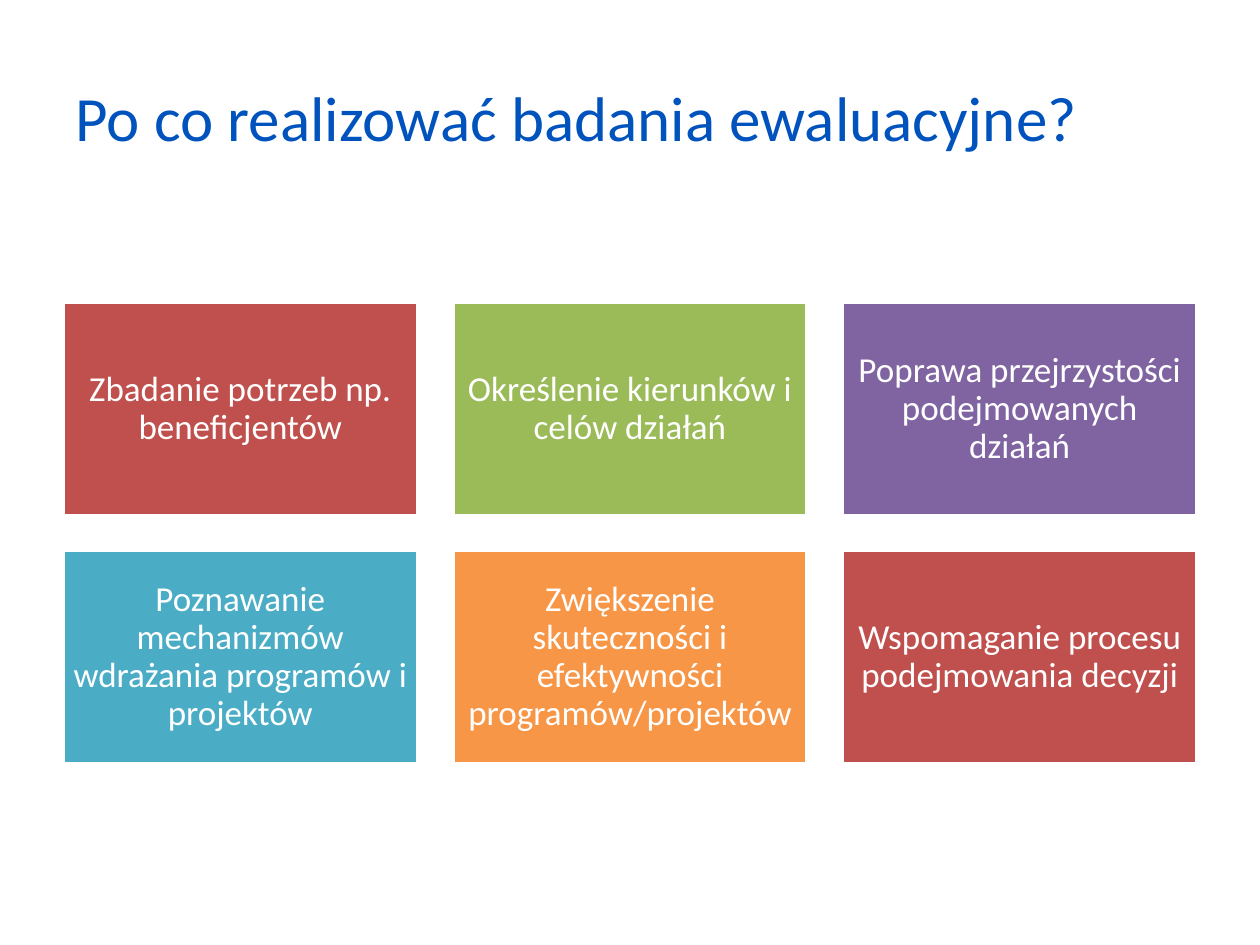
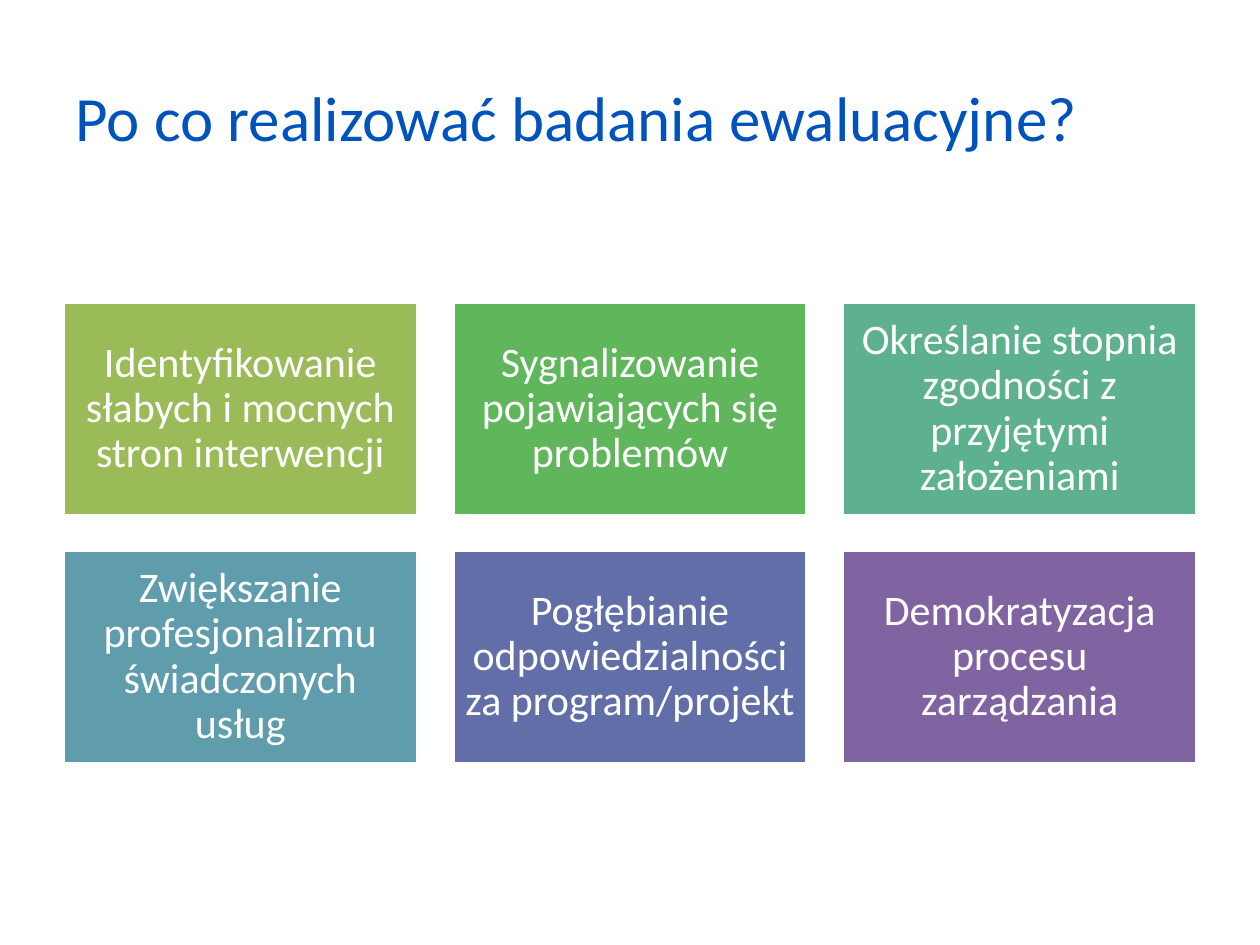
import lxml.etree
import pptx
import pptx.dml.color
import pptx.enum.shapes
import pptx.enum.text
import pptx.oxml.ns
import pptx.util

Cm = pptx.util.Cm
Pt = pptx.util.Pt

COLORS = {
    "title": "0053BD",
    "title_outline": "0570BD",
    "white": "FFFFFF",
    "red": "C0504D",
    "lime": "9BBB59",
    "green": "5FB65B",
    "mint": "5DB18E",
    "teal": "5F9DAC",
    "aqua": "4BACC6",
    "indigo": "626EA7",
    "purple": "8064A2",
    "orange": "F79646",
}
FONT = "Calibri"
TITLE = "Po co realizować badania ewaluacyjne?"

# Grid of tiles, in centimetres
MARGIN = 1.27
CONTENT_WIDTH = 22.86
GRID_TOP = 6.1
COLUMNS = 3
GAP = 0.71
TILE_WIDTH = (CONTENT_WIDTH - (COLUMNS - 1) * GAP) / COLUMNS
TILE_HEIGHT = 4.29

# Each slide: text size in points, inset in centimetres, tiles in reading order
SLIDES = [
    (20, 0.2, [
        ("Zbadanie potrzeb np. beneficjentów", "red"),
        ("Określenie kierunków i celów działań", "lime"),
        ("Poprawa przejrzystości podejmowanych działań", "purple"),
        ("Poznawanie mechanizmów wdrażania programów i projektów", "aqua"),
        ("Zwiększenie skuteczności i efektywności programów/projektów", "orange"),
        ("Wspomaganie procesu podejmowania decyzji", "red"),
    ]),
    (24, 0.25, [
        ("Identyfikowanie słabych i mocnych stron interwencji", "lime"),
        ("Sygnalizowanie pojawiających się problemów", "green"),
        ("Określanie stopnia zgodności z przyjętymi założeniami", "mint"),
        ("Zwiększanie profesjonalizmu świadczonych usług", "teal"),
        ("Pogłębianie odpowiedzialności za program/projekt", "indigo"),
        ("Demokratyzacja procesu zarządzania", "purple"),
    ]),
]


def rgb(name):
    return pptx.dml.color.RGBColor.from_string(COLORS[name])


def format_font(font, size, color):
    font.name = FONT
    font.size = Pt(size)
    font.color.rgb = rgb(color)


def outline_text(run, color, width):
    """Draw a thin line around the letters of a run."""
    qn = pptx.oxml.ns.qn
    line = lxml.etree.Element(qn("a:ln"), w=str(Pt(width)))
    fill = lxml.etree.SubElement(line, qn("a:solidFill"))
    lxml.etree.SubElement(fill, qn("a:srgbClr"), val=COLORS[color])
    run.font._element.insert(0, line)


def set_title(slide, text):
    title = slide.shapes.title
    title.left, title.top = Cm(MARGIN), Cm(0.76)
    title.width, title.height = Cm(CONTENT_WIDTH), Cm(3.18)
    text_frame = title.text_frame
    text_frame.text = text
    text_frame.vertical_anchor = pptx.enum.text.MSO_ANCHOR.MIDDLE
    paragraph = text_frame.paragraphs[0]
    paragraph.alignment = pptx.enum.text.PP_ALIGN.LEFT
    run = paragraph.runs[0]
    format_font(run.font, 36, "title")
    outline_text(run, "title_outline", 0.75)


def add_tile(slide, left, top, text, color, size, inset):
    shape = slide.shapes.add_shape(
        pptx.enum.shapes.MSO_SHAPE.RECTANGLE,
        Cm(left), Cm(top), Cm(TILE_WIDTH), Cm(TILE_HEIGHT))
    shape.shadow.inherit = False
    shape.fill.solid()
    shape.fill.fore_color.rgb = rgb(color)
    shape.line.color.rgb = rgb("white")
    shape.line.width = Pt(2)

    text_frame = shape.text_frame
    text_frame.word_wrap = True
    text_frame.vertical_anchor = pptx.enum.text.MSO_ANCHOR.MIDDLE
    text_frame.margin_left = text_frame.margin_right = Cm(inset)
    text_frame.margin_top = text_frame.margin_bottom = Cm(inset)
    text_frame.text = text
    paragraph = text_frame.paragraphs[0]
    paragraph.alignment = pptx.enum.text.PP_ALIGN.CENTER
    paragraph.line_spacing = 0.9
    format_font(paragraph.runs[0].font, size, "white")


def add_tile_grid(slide, tiles, size, inset):
    for index, (text, color) in enumerate(tiles):
        row, column = divmod(index, COLUMNS)
        left = MARGIN + column * (TILE_WIDTH + GAP)
        top = GRID_TOP + row * (TILE_HEIGHT + GAP)
        add_tile(slide, left, top, text, color, size, inset)


def main():
    presentation = pptx.Presentation()
    presentation.slide_width, presentation.slide_height = Cm(25.4), Cm(19.05)
    title_only = presentation.slide_layouts.get_by_name("Title Only")
    for size, inset, tiles in SLIDES:
        slide = presentation.slides.add_slide(title_only)
        set_title(slide, TITLE)
        add_tile_grid(slide, tiles, size, inset)
    presentation.save("out.pptx")


if __name__ == "__main__":
    main()
